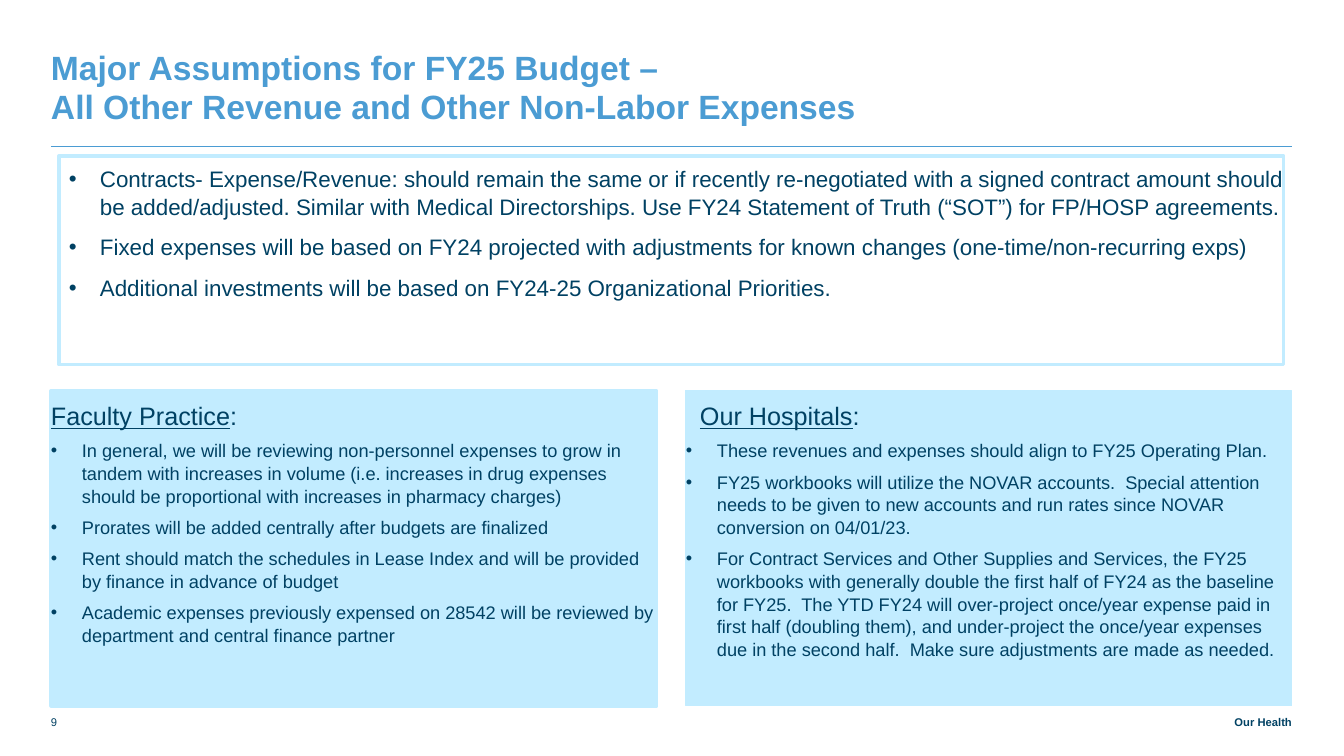
from pptx import Presentation
from pptx.dml.color import RGBColor
from pptx.enum.shapes import MSO_CONNECTOR, MSO_SHAPE
from pptx.enum.text import MSO_ANCHOR, PP_ALIGN
from pptx.oxml.ns import qn
from pptx.util import Pt
from lxml.etree import SubElement

# Content
TITLE = ["Major Assumptions for FY25 Budget –",
         "All Other Revenue and Other Non-Labor Expenses"]
GENERAL = [
    "Contracts- Expense/Revenue: should remain the same or if recently re-negotiated with a signed contract amount should be added/adjusted. Similar with Medical Directorships. Use FY24 Statement of Truth (“SOT”) for FP/HOSP agreements.",
    "Fixed expenses will be based on FY24 projected with adjustments for known changes (one-time/non-recurring exps)",
    "Additional investments will be based on FY24-25 Organizational Priorities.",
]
# Heading, heading indent (px), border width (pt), bullets
PANELS = [
    ("Faculty Practice", 0, 2.25, [
        "In general, we will be reviewing non-personnel expenses to grow in tandem with increases in volume (i.e. increases in drug expenses should be proportional with increases in pharmacy charges)",
        "Prorates will be added centrally after budgets are finalized",
        "Rent should match the schedules in Lease Index and will be provided by finance in advance of budget",
        "Academic expenses previously expensed on 28542 will be reviewed by department and central finance partner",
    ]),
    ("Our Hospitals", 14, 0.75, [
        "These revenues and expenses should align to FY25 Operating Plan.",
        "FY25 workbooks will utilize the NOVAR accounts.  Special attention needs to be given to new accounts and run rates since NOVAR conversion on 04/01/23.",
        "For Contract Services and Other Supplies and Services, the FY25 workbooks with generally double the first half of FY24 as the baseline for FY25.  The YTD FY24 will over-project once/year expense paid in first half (doubling them), and under-project the once/year expenses due in the second half.  Make sure adjustments are made as needed.",
    ]),
]
PAGE_NUMBER = "9"
FOOTER = "Our Health"

# Style and layout
NAVY = RGBColor(0x00, 0x41, 0x63)
BLUE = RGBColor(0x4B, 0x9C, 0xD3)
PALE = RGBColor(0xC2, 0xEC, 0xFF)
FONT = "Arial"
LEFT, RIGHT = 51, 1292
PANEL_W = 606
HANG = 31
LINE_SPACING = 1.04


def px(n):
    return round(n * 914400 / 100.8)


def set_frame(sp, anchor, left=0, top=0, right=0, bottom=0):
    tf = sp.text_frame
    tf.word_wrap = True
    tf.vertical_anchor = anchor
    tf.margin_left, tf.margin_top = px(left), px(top)
    tf.margin_right, tf.margin_bottom = px(right), px(bottom)
    return tf


def add_run(p, text, size, color=NAVY, bold=False, underline=False):
    r = p.add_run()
    r.text = text
    f = r.font
    f.name, f.size, f.bold, f.underline = FONT, Pt(size), bold, underline
    f.color.rgb = color


def add_paragraph(tf, after, indent=0, hanging=0):
    first = tf.paragraphs[0]
    p = tf.add_paragraph() if first.runs else first
    p.alignment = PP_ALIGN.LEFT
    p.line_spacing = LINE_SPACING
    p.space_after = Pt(after)
    pPr = p._p.get_or_add_pPr()
    pPr.set("marL", str(px(indent)))
    pPr.set("indent", str(-px(hanging)))
    return p


def add_bullets(tf, items, size, after, indent):
    for item in items:
        p = add_paragraph(tf, after, indent, HANG)
        pPr = p._p.get_or_add_pPr()
        SubElement(pPr, qn("a:buFont")).set("typeface", FONT)
        SubElement(pPr, qn("a:buChar")).set("char", "•")
        add_run(p, item, size)


def add_box(slide, x, y, w, h, border, fill=None):
    sp = slide.shapes.add_shape(MSO_SHAPE.RECTANGLE, px(x), px(y), px(w), px(h))
    sp.shadow.inherit = False
    if fill is None:
        sp.fill.background()
    else:
        sp.fill.solid()
        sp.fill.fore_color.rgb = fill
    sp.line.color.rgb = PALE
    sp.line.width = Pt(border)
    return set_frame(sp, MSO_ANCHOR.TOP, top=8)


def add_label(slide, text, x, w, align, bold=False):
    sp = slide.shapes.add_textbox(px(x), px(706), px(w), px(23))
    p = set_frame(sp, MSO_ANCHOR.BOTTOM).paragraphs[0]
    p.alignment = align
    add_run(p, text, 8, bold=bold)


def main():
    prs = Presentation()
    prs.slide_width, prs.slide_height = px(1344), px(756)
    slide = prs.slides.add_slide(prs.slide_layouts[5])

    # Title
    title = slide.shapes.title
    title.left, title.top = px(LEFT), px(38)
    title.width, title.height = px(RIGHT - LEFT), px(80)
    p = set_frame(title, MSO_ANCHOR.BOTTOM, top=96, right=214).paragraphs[0]
    p.alignment = PP_ALIGN.LEFT
    p.line_spacing = Pt(28)
    for i, line in enumerate(TITLE):
        if i:
            p.add_line_break()
        add_run(p, line, 24, BLUE, bold=True)

    # Rule under the title
    rule = slide.shapes.add_connector(MSO_CONNECTOR.STRAIGHT, px(LEFT), px(146), px(RIGHT), px(146))
    rule.line.color.rgb = BLUE
    rule.line.width = Pt(0.5)
    SubElement(rule._element.spPr, qn("a:effectLst"))

    # General assumptions
    tf = add_box(slide, 59, 156, 1225, 209, 2.25)
    add_bullets(tf, GENERAL, 16, 9, 41)

    # Two panels, flush with the left and right margins
    for x, (heading, indent, border, items) in zip((LEFT, RIGHT - PANEL_W), PANELS):
        tf = add_box(slide, x, 391, PANEL_W, 315, border, PALE)
        p = add_paragraph(tf, 6, indent)
        add_run(p, heading, 18, underline=True)
        add_run(p, ":", 18)
        add_bullets(tf, items, 13, 6, HANG)

    # Footer
    add_label(slide, PAGE_NUMBER, LEFT, 46, PP_ALIGN.LEFT)
    add_label(slide, FOOTER, RIGHT - 165, 165, PP_ALIGN.RIGHT, bold=True)

    prs.save("out.pptx")


if __name__ == "__main__":
    main()
